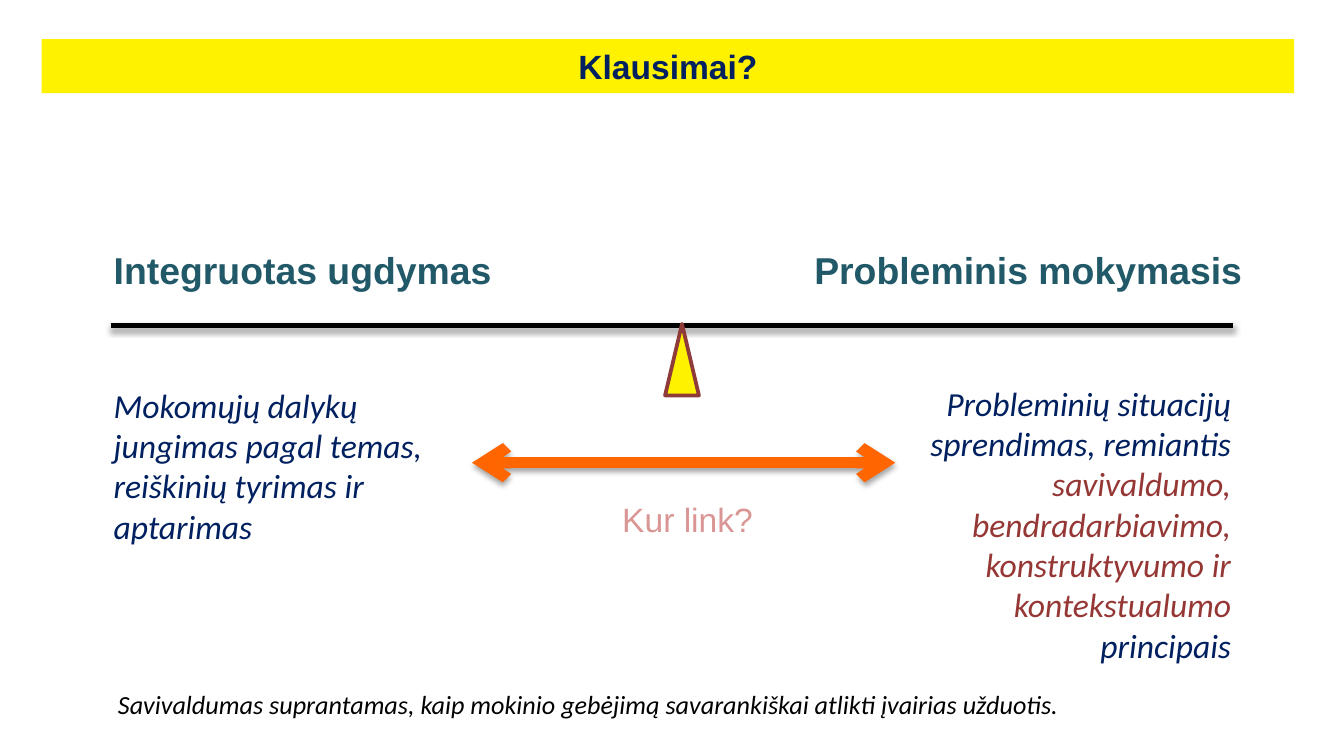
from lxml.etree import SubElement
from pptx import Presentation
from pptx.dml.color import RGBColor
from pptx.enum.shapes import MSO_CONNECTOR, MSO_SHAPE
from pptx.enum.text import MSO_ANCHOR, MSO_AUTO_SIZE, PP_ALIGN
from pptx.oxml.ns import qn
from pptx.util import Cm, Pt

NAVY, TEAL, MAROON, PINK = "002060", "215968", "953735", "D99694"
YELLOW, ORANGE, BLACK, BROWN = "FFF200", "FF6600", "000000", "8E3B39"
LEFT, CENTER, RIGHT = PP_ALIGN.LEFT, PP_ALIGN.CENTER, PP_ALIGN.RIGHT

TITLE = [("Klausimai?", NAVY)]
TITLE_BOX = (0.79, 0.74, 23.67, 1.02)
PIVOT_BOX = (12.57, 6.12, 0.64, 1.35)

BEAM = dict(start=2.1, end=23.3, y=6.15, color=BLACK, width=3)
LINK = dict(start=8.92, end=16.92, y=8.74, color=ORANGE, width=6, arrows=True)

HEADING = dict(font="Arial", size=20, bold=True)
BODY = dict(font="Calibri", size=18, italic=True, wrap=True)
TEXTS = [
    ((11.51, 9.3, 3, 1.02), [("Kur link?", PINK)], dict(font="Arial", size=18)),
    ((1.9, 4.55, 7.72, 1.12), [("Integruotas ugdymas", TEAL)], HEADING),
    ((15.14, 4.55, 8.66, 1.12), [("Probleminis mokymasis", TEAL)], HEADING),
    ((1.9, 7.14, 7.01, 3.33),
     [("Mokomųjų dalykų jungimas pagal temas, reiškinių tyrimas ir aptarimas", NAVY)],
     BODY),
    ((16.51, 7.1, 7.01, 5.64),
     [("Probleminių situacijų sprendimas, remiantis ", NAVY),
      ("savivaldumo, bendradarbiavimo, konstruktyvumo ir kontekstualumo ", MAROON),
      ("principais", NAVY)],
     dict(BODY, align=RIGHT)),
    ((1.98, 12.88, 18.52, 0.86),
     [("Savivaldumas suprantamas, kaip mokinio gebėjimą savarankiškai "
       "atlikti įvairias užduotis.", BLACK)],
     dict(font="Calibri", size=14, italic=True)),
]


def rgb(color):
    return RGBColor.from_string(color)


def place(box):
    return [Cm(length) for length in box]


def write(frame, parts, font, size, bold=False, italic=False, align=LEFT, wrap=False):
    frame.word_wrap = wrap
    frame.auto_size = MSO_AUTO_SIZE.SHAPE_TO_FIT_TEXT
    frame.vertical_anchor = MSO_ANCHOR.TOP
    paragraph = frame.paragraphs[0]
    paragraph.alignment = align
    for text, color in parts:
        run = paragraph.add_run()
        run.text = text
        run.font.name = font
        run.font.size = Pt(size)
        run.font.bold = bold
        run.font.italic = italic
        run.font.color.rgb = rgb(color)


def add_form(slide, preset, box, fill):
    form = slide.shapes.add_shape(preset, *place(box))
    form.shadow.inherit = False
    form.fill.solid()
    form.fill.fore_color.rgb = rgb(fill)
    form.line.fill.background()
    return form


def add_line(slide, start, end, y, color, width, arrows=False):
    line = slide.shapes.add_connector(
        MSO_CONNECTOR.STRAIGHT, Cm(start), Cm(y), Cm(end), Cm(y))
    line.line.color.rgb = rgb(color)
    line.line.width = Pt(width)
    if arrows:
        for tip in ("a:headEnd", "a:tailEnd"):
            SubElement(line.line._get_or_add_ln(), qn(tip), type="arrow")
    effects = SubElement(line._element.spPr, qn("a:effectLst"))
    shadow = SubElement(effects, qn("a:outerShdw"), blurRad=str(Pt(3.1)),
                        dist=str(Pt(1.8)), dir="5400000", rotWithShape="0")
    shade = SubElement(shadow, qn("a:srgbClr"), val=BLACK)
    SubElement(shade, qn("a:alpha"), val="35000")


def main():
    deck = Presentation()
    deck.slide_width, deck.slide_height = Cm(25.4), Cm(14.28)
    slide = deck.slides.add_slide(deck.slide_layouts[6])

    for line in (LINK, BEAM):
        add_line(slide, **line)

    pivot = add_form(slide, MSO_SHAPE.ISOSCELES_TRIANGLE, PIVOT_BOX, YELLOW)
    pivot.line.color.rgb = rgb(BROWN)
    pivot.line.width = Pt(2)

    banner = add_form(slide, MSO_SHAPE.RECTANGLE, TITLE_BOX, YELLOW)
    write(banner.text_frame, TITLE, "Arial", 18, bold=True, align=CENTER, wrap=True)

    for box, parts, style in TEXTS:
        write(slide.shapes.add_textbox(*place(box)).text_frame, parts, **style)

    deck.save("out.pptx")


if __name__ == "__main__":
    main()
